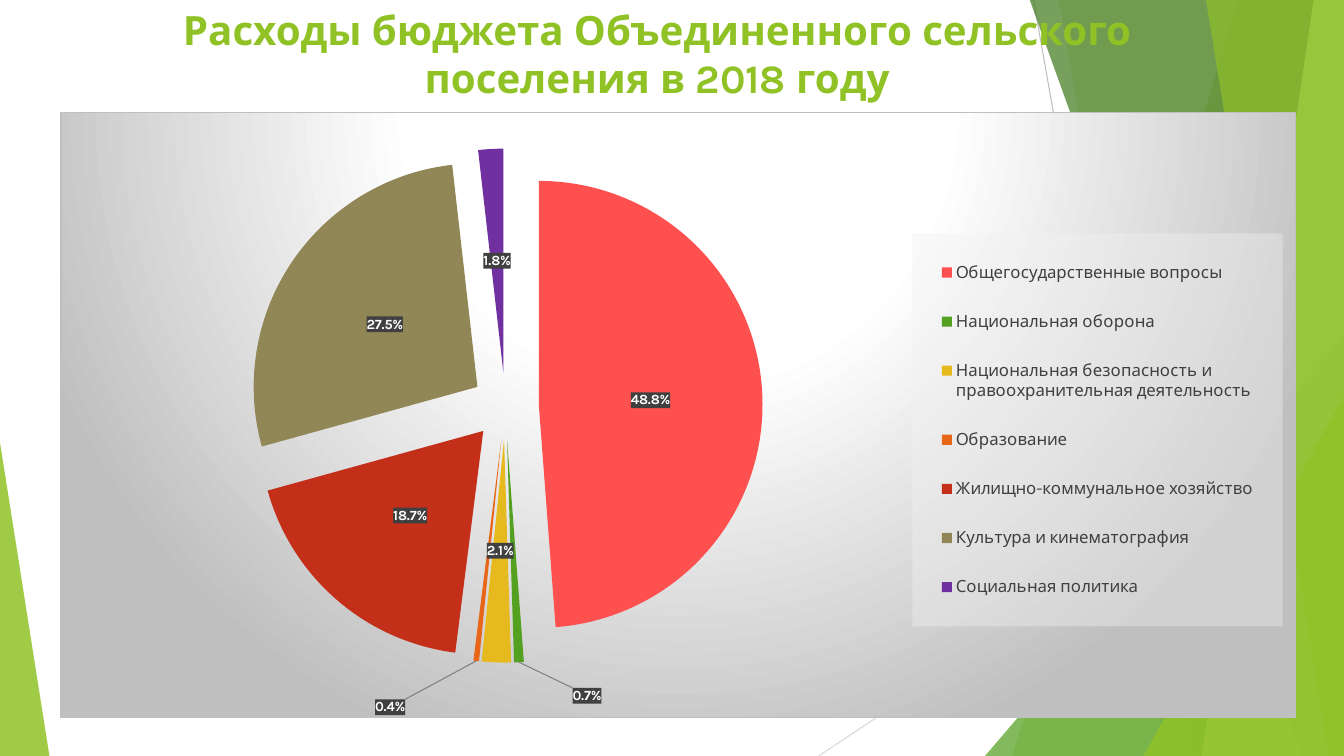
import copy

import pptx
import pptx.chart.data
import pptx.dml.color
import pptx.enum.chart
import pptx.enum.shapes
import pptx.enum.text
import pptx.oxml
import pptx.oxml.ns
import pptx.util
from lxml import etree

RGB = pptx.dml.color.RGBColor
Inches, Pt = pptx.util.Inches, pptx.util.Pt
qn = pptx.oxml.ns.qn
NS = pptx.oxml.ns.nsdecls("a", "c")

LIME = RGB(0x90, 0xC2, 0x26)
PALE_LIME = RGB(0xC0, 0xE4, 0x74)
GREEN = RGB(0x54, 0xA0, 0x21)
DARK_GREEN = RGB(0x3F, 0x78, 0x19)
SILVER = RGB(0xBF, 0xBF, 0xBF)
LIGHT_GREY = RGB(0xD9, 0xD9, 0xD9)
CHARCOAL = RGB(0x40, 0x40, 0x40)
BLACK = RGB(0, 0, 0)
WHITE = RGB(0xFF, 0xFF, 0xFF)
FONT = "Karla"
W, H = 13.33, 7.5

deck = pptx.Presentation()
deck.slide_width, deck.slide_height = Inches(W), Inches(H)
slide = deck.slides.add_slide(deck.slide_layouts[6])
shapes = slide.shapes


def paint(facet, color, opacity):
    """Fill a borderless facet with a translucent colour."""
    facet.shadow.inherit = False
    facet.fill.solid()
    facet.fill.fore_color.rgb = color
    facet.line.fill.background()
    tint = facet.fill._xPr.find(qn("a:solidFill"))[0]
    etree.SubElement(tint, qn("a:alpha")).set("val", str(opacity * 1000))


def place(parent, index, **shares):
    """Give a chart part a manual layout in shares of the chart's size."""
    for old in parent.findall(qn("c:layout")):
        parent.remove(old)
    settings = "".join(f'<c:{key} val="{value}"/>' for key, value in shares.items())
    parent.insert(index, pptx.oxml.parse_xml(
        f"<c:layout {NS}><c:manualLayout>{settings}</c:manualLayout></c:layout>"))


# Background facets
for x1, y1, x2, y2, color in [(10.25, 0, 11.58, H, SILVER), (W, 4.03, 8.12, H, LIGHT_GREY)]:
    ray = shapes.add_connector(pptx.enum.shapes.MSO_CONNECTOR.STRAIGHT,
                               Inches(x1), Inches(y1), Inches(x2), Inches(y2))
    ray.line.color.rgb = color
    ray.line.width = Pt(0.75)
    etree.SubElement(ray._element.spPr, qn("a:effectLst"))

# Bands run to the right edge: (top left x, bottom left x, colour, opacity);
# triangles: (left, top, width, apex, colour, opacity)
facets = [
    ("band", 12.28, 10.04, LIME, 30),
    ("band", 10.5, 11.83, LIME, 20),
    ("triangle", 9.77, 3.33, 3.56, 1, GREEN, 72),
    ("band", 10.21, 12.91, DARK_GREEN, 70),
    ("band", 13.03, 11.92, PALE_LIME, 70),
    ("band", 11.96, 13.18, LIME, 65),
    ("triangle", 11.34, 3.93, 1.99, 1, LIME, 80),
    ("triangle", 0, 4.39, 0.49, 0, LIME, 85),
]
for kind, *geometry, color, opacity in facets:
    if kind == "band":
        top_x, bottom_x = geometry
        outline = shapes.build_freeform(Inches(top_x), Inches(-0.01), scale=1.0)
        outline.add_line_segments([(Inches(x), Inches(y)) for x, y in
                                   [(W, -0.01), (W, H), (bottom_x, H)]], close=True)
        facet = outline.convert_to_shape()
    else:
        left, top, width, apex = geometry
        facet = shapes.add_shape(pptx.enum.shapes.MSO_SHAPE.ISOSCELES_TRIANGLE,
                                 Inches(left), Inches(top), Inches(width), Inches(H - top))
        facet.adjustments[0] = apex
    paint(facet, color, opacity)

# Title
title = shapes.add_textbox(Inches(0.77), 0, Inches(11.5), Inches(0.77)).text_frame
title.word_wrap = True
title.vertical_anchor = pptx.enum.text.MSO_ANCHOR.TOP
heading = title.paragraphs[0]
heading.alignment = pptx.enum.text.PP_ALIGN.CENTER
run = heading.add_run()
run.text = "Расходы бюджета Объединенного сельского поселения в 2018 году"
run.font.size, run.font.bold, run.font.name = Pt(28.8), True, FONT
run.font.color.rgb = LIME

# Spending pie
spending = [
    ("Общегосударственные вопросы", 48.8, RGB(0xFF, 0x50, 0x50)),
    ("Национальная оборона", 0.7, GREEN),
    ("Национальная безопасность и правоохранительная деятельность", 2.1,
     RGB(0xE6, 0xB9, 0x1E)),
    ("Образование", 0.4, RGB(0xE7, 0x66, 0x18)),
    ("Жилищно-коммунальное хозяйство", 18.7, RGB(0xC4, 0x2F, 0x1A)),
    ("Культура и кинематография", 27.5, RGB(0x91, 0x86, 0x55)),
    ("Социальная политика", 1.8, RGB(0x70, 0x30, 0xA0)),
]
budget = pptx.chart.data.CategoryChartData(number_format='0.0"%"')
budget.categories = [name for name, share, color in spending]
budget.add_series("Series 1", [share for name, share, color in spending])
chart = shapes.add_chart(pptx.enum.chart.XL_CHART_TYPE.PIE, Inches(0.6), Inches(1.11),
                         Inches(12.25), Inches(6.01), budget).chart
chart.has_title = False
chart.font.size, chart.font.name = Pt(10), FONT
chart.font.color.rgb = BLACK
pie = chart.plots[0]
pie.vary_by_categories = True
series = pie.series[0]
series._element.find(qn("c:tx")).addnext(
    pptx.oxml.parse_xml(f'<c:explosion {NS} val="15"/>'))
for index, (name, share, color) in enumerate(spending):
    wedge = series.points[index].format
    wedge.fill.solid()
    wedge.fill.fore_color.rgb = color
    wedge.line.fill.background()

# Value labels, the two thinnest wedges' labels pulled outside
labels = series.data_labels
labels.show_value = True
labels.number_format, labels.number_format_is_linked = '0.0"%"', False
labels.position = pptx.enum.chart.XL_LABEL_POSITION.CENTER
labels.font.size, labels.font.bold, labels.font.name = Pt(10), True, FONT
labels.font.color.rgb = WHITE
label_set = labels._element
label_set.find(qn("c:numFmt")).addnext(pptx.oxml.parse_xml(
    f'<c:spPr {NS}><a:solidFill><a:srgbClr val="{CHARCOAL}"><a:alpha val="90000"/>'
    '</a:srgbClr></a:solidFill><a:ln><a:noFill/></a:ln></c:spPr>'))
shared_format = [copy.deepcopy(part) for part in label_set
                 if part.tag not in (qn("c:showLeaderLines"), qn("c:leaderLines"))]
for old in label_set.findall(qn("c:showLeaderLines")):
    label_set.remove(old)
label_set.append(pptx.oxml.parse_xml(f'<c:showLeaderLines {NS} val="1"/>'))
label_set.append(pptx.oxml.parse_xml(
    f'<c:leaderLines {NS}><c:spPr><a:ln w="9525"><a:solidFill><a:srgbClr val="7F7F7F"/>'
    '</a:solidFill></a:ln></c:spPr></c:leaderLines>'))
for slot, (index, dx, dy) in enumerate([(1, 0.06, 0.24), (3, -0.08, 0.26)]):
    label = pptx.oxml.parse_xml(f'<c:dLbl {NS}><c:idx val="{index}"/></c:dLbl>')
    label.extend(copy.deepcopy(shared_format))
    place(label, 1, x=dx, y=dy)
    label_set.insert(slot, label)

# Legend and plot area
chart.has_legend = True
legend = chart.legend
legend.position = pptx.enum.chart.XL_LEGEND_POSITION.RIGHT
legend.include_in_layout = False
legend.font.size, legend.font.name = Pt(12), FONT
legend.font.color.rgb = CHARCOAL
place(legend._element, 1, xMode="edge", yMode="edge", x=0.69, y=0.2, w=0.3, h=0.65)
legend._element.find(qn("c:overlay")).addnext(pptx.oxml.parse_xml(
    f'<c:spPr {NS}><a:solidFill><a:srgbClr val="F2F2F2"><a:alpha val="39000"/>'
    '</a:srgbClr></a:solidFill><a:ln><a:noFill/></a:ln></c:spPr>'))
chart_space = chart._chartSpace
place(chart_space.chart.plotArea, 0, layoutTarget="inner", xMode="edge", yMode="edge",
      x=0.07, y=0.06, w=0.58, h=0.85)

# Chart backdrop
stops = "".join(f'<a:gs pos="{pos * 1000}"><a:srgbClr val="{color}"/></a:gs>'
                for pos, color in [(0, WHITE), (39, WHITE), (100, SILVER)])
chart_space.chart.addnext(pptx.oxml.parse_xml(
    f'<c:spPr {NS}><a:gradFill><a:gsLst>{stops}</a:gsLst><a:path path="circle">'
    '<a:fillToRect l="50000" t="-80000" r="50000" b="180000"/></a:path></a:gradFill>'
    f'<a:ln w="9525"><a:solidFill><a:srgbClr val="{SILVER}"/></a:solidFill></a:ln></c:spPr>'))

deck.save("out.pptx")
